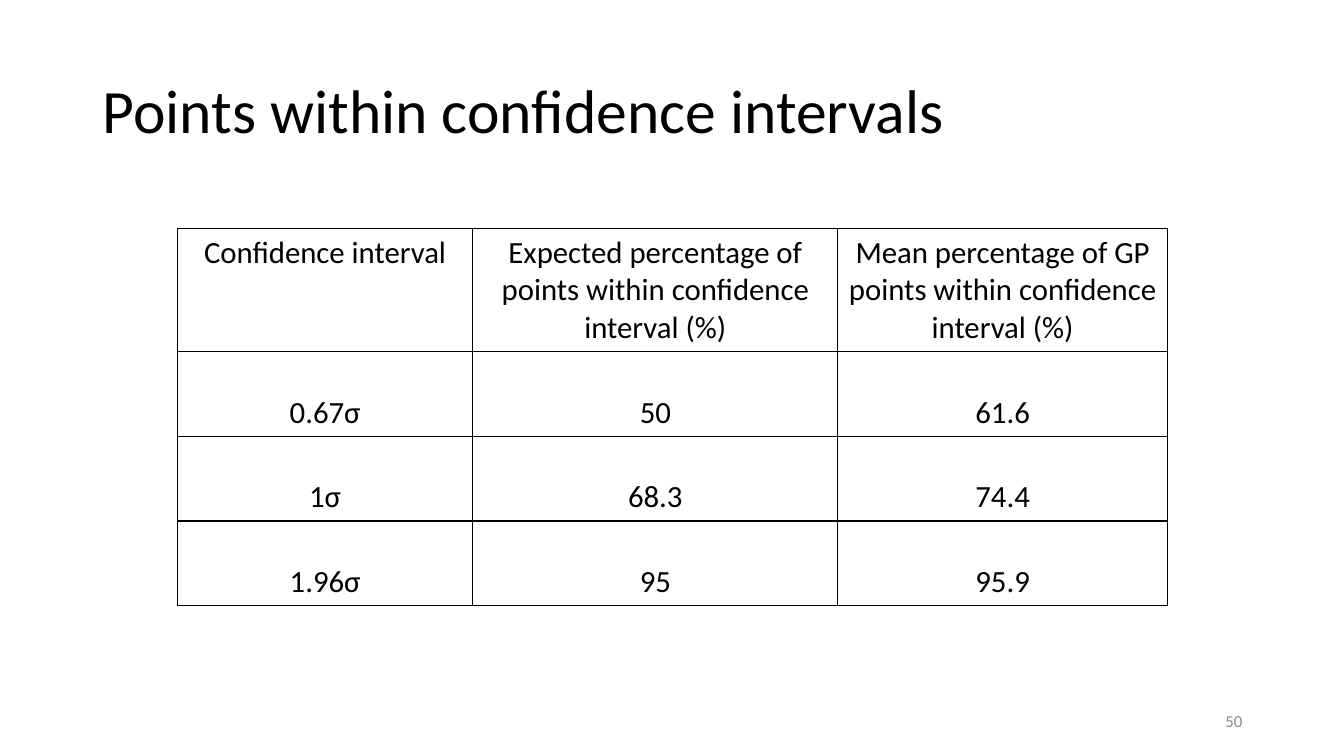
from lxml import etree
from pptx import Presentation
from pptx.dml.color import RGBColor
from pptx.enum.text import MSO_ANCHOR, PP_ALIGN
from pptx.oxml.ns import qn
from pptx.util import Inches, Pt

BLACK = RGBColor(0x00, 0x00, 0x00)
WHITE = RGBColor(0xFF, 0xFF, 0xFF)
GRAY = RGBColor(0x8C, 0x8C, 0x8C)
LEFT, CENTER, RIGHT = PP_ALIGN.LEFT, PP_ALIGN.CENTER, PP_ALIGN.RIGHT
TOP, MIDDLE, BOTTOM = MSO_ANCHOR.TOP, MSO_ANCHOR.MIDDLE, MSO_ANCHOR.BOTTOM
FONT = "Calibri"

COLS = (2.93, 3.62, 3.27)
HEAD, BODY = 1.22, 0.84
ROWS = (
    ("Confidence interval",
     "Expected percentage of points within confidence interval (%)",
     "Mean percentage of GP points within confidence interval (%)"),
    ("0.67σ", "50", "61.6"),
    ("1σ", "68.3", "74.4"),
    ("1.96σ", "95", "95.9"),
)


def write(frame, text, size=22, color=BLACK, align=LEFT, space=1.0):
    """Fill a text frame with one formatted paragraph."""
    frame.word_wrap = True
    para = frame.paragraphs[0]
    para.alignment = align
    para.line_spacing = space
    run = para.add_run()
    run.text = text
    run.font.name = FONT
    run.font.size = Pt(size)
    run.font.color.rgb = color


def add_label(slide, box, text, **style):
    """Place a vertically centred text box."""
    frame = slide.shapes.add_textbox(*map(Inches, box)).text_frame
    frame.vertical_anchor = MIDDLE
    write(frame, text, **style)


def add_edges(cell):
    """Draw a thin black line on each side of a cell."""
    props = cell._tc.get_or_add_tcPr()
    for side in ("a:lnL", "a:lnR", "a:lnT", "a:lnB"):
        line = etree.SubElement(props, qn(side), w=str(Pt(1)))
        fill = etree.SubElement(line, qn("a:solidFill"))
        etree.SubElement(fill, qn("a:srgbClr"), val=str(BLACK))


def add_grid(slide, left, top):
    """Build the table of confidence intervals at a corner."""
    highs = [HEAD] + [BODY] * (len(ROWS) - 1)
    box = (left, top, sum(COLS), sum(highs))
    table = slide.shapes.add_table(len(ROWS), len(COLS), *map(Inches, box)).table
    table.first_row = False
    table.horz_banding = False
    for col, width in zip(table.columns, COLS):
        col.width = Inches(width)
    for i, (row, high) in enumerate(zip(table.rows, highs)):
        row.height = Inches(high)
        for cell, text in zip(row.cells, ROWS[i]):
            add_edges(cell)
            cell.fill.solid()
            cell.fill.fore_color.rgb = WHITE
            cell.vertical_anchor = BOTTOM if i else TOP
            write(cell.text_frame, text, align=CENTER)


def main():
    """Build and save the slide."""
    deck = Presentation()
    deck.slide_width, deck.slide_height = Inches(13.33), Inches(7.5)
    slide = deck.slides.add_slide(deck.slide_layouts[6])
    add_label(slide, (0.92, 0.4, 11.5, 1.45),
              "Points within confidence intervals", size=44, space=0.9)
    add_grid(slide, 1.76, 2.27)
    add_label(slide, (9.42, 6.95, 3, 0.4), "50", size=12, color=GRAY, align=RIGHT)
    deck.save("out.pptx")


if __name__ == "__main__":
    main()
